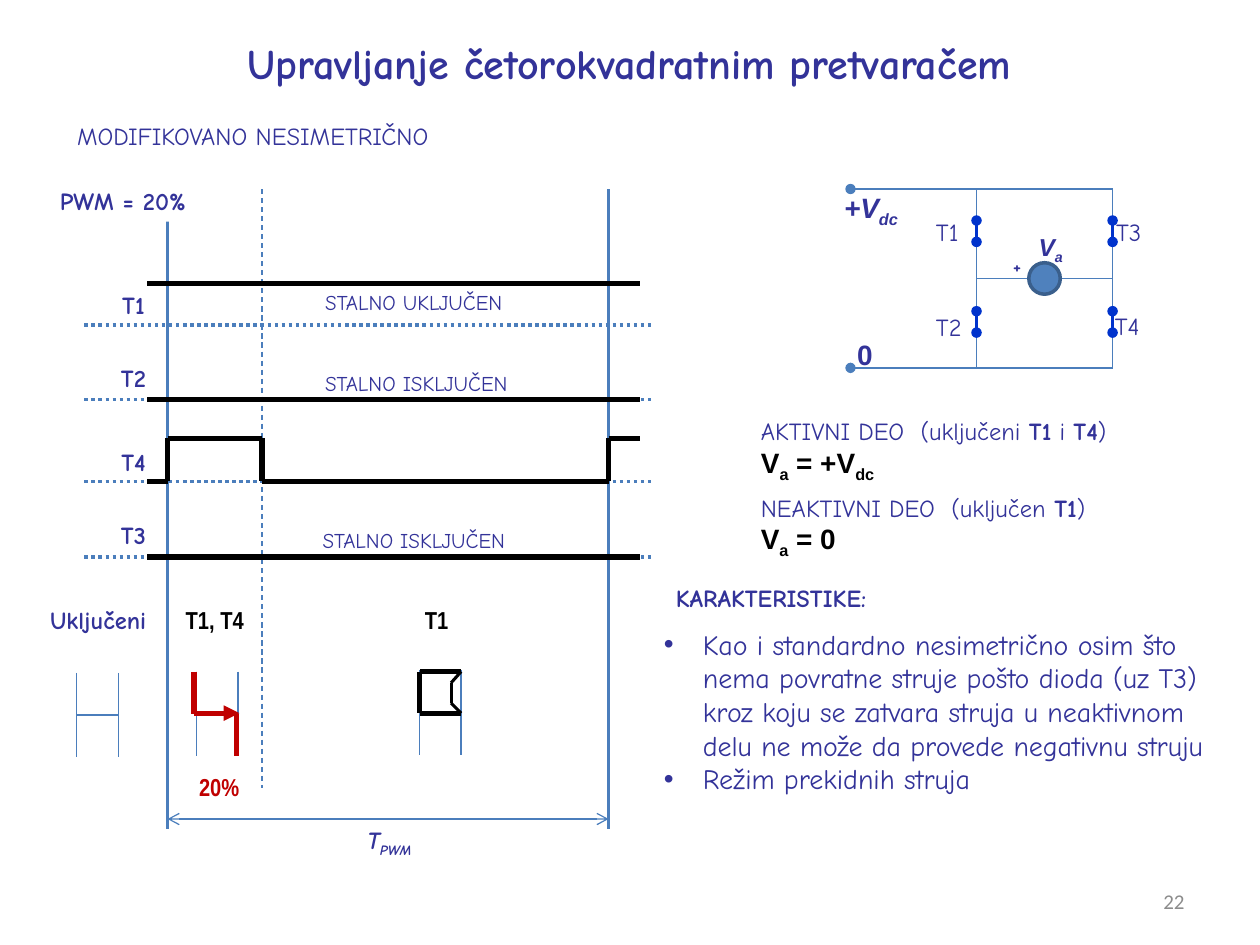
from lxml.etree import SubElement
from pptx import Presentation
from pptx.dml.color import RGBColor
from pptx.enum.dml import MSO_LINE
from pptx.enum.shapes import MSO_CONNECTOR, MSO_SHAPE
from pptx.enum.text import MSO_ANCHOR, MSO_AUTO_SIZE, PP_ALIGN
from pptx.oxml.ns import qn
from pptx.util import Inches, Pt

NAVY, BLUE, BLACK, RED, SWITCH = "333399", "4B7EBC", "000000", "C00000", "0033CC"
WHITE, GREY = "FFFFFF", "8C8C8C"
COMIC, ARIAL, NARROW = "Comic Neue", "Arial", "Arial Narrow"

START, SPLIT, END = 1.33, 2.08, 4.83
LEAD, TAIL = 1.17, 5.08
PERIOD_TOP, PERIOD_BOTTOM = 1.5, 6.58

BASELINES = [2.58, 3.17, 3.82, 4.42]
CONSTANT_SIGNALS = [2.25, 3.17, 4.42]
T4_HIGH, T4_LOW = 3.48, 3.82
T4_SIGNAL = [(LEAD, T4_LOW), (START, T4_LOW), (START, T4_HIGH), (SPLIT, T4_HIGH),
             (SPLIT, T4_LOW), (END, T4_LOW), (END, T4_HIGH), (TAIL, T4_HIGH)]

BRIDGES = [(0.61, 5.34), (1.56, 5.33), (3.33, 5.32)]
BRIDGE_WIDTH, BRIDGE_HEIGHT = 0.33, 0.67
FREEWHEEL_LOOP = [(3.66, 5.33), (3.33, 5.33), (3.33, 5.66), (3.66, 5.66)]
DIODE = [(3.66, 5.33), (3.58, 5.42), (3.58, 5.58), (3.66, 5.66)]

RAIL_START, LEFT_LEG, RIGHT_LEG = 6.75, 7.75, 8.83
RAIL_TOP, LOAD_LEVEL, RAIL_BOTTOM = 1.5, 2.21, 2.92
SWITCH_TOPS, SWITCH_LENGTH = [1.75, 2.47], 0.17
LOAD_DIAMETER = 0.25

# style letters are b bold, i italic, s subscript
LABEL_GROUPS = [
    (COMIC, 24, NAVY, "b", [((1.37, 0.25, 7.25, 0.5), "Upravljanje četorokvadratnim pretvaračem")]),
    (COMIC, 14, NAVY, "", [((0.18, 0.91, 3.72, 0.34), "MODIFIKOVANO NESIMETRIČNO ")]),
    (COMIC, 14, NAVY, "b", [
        ((0.83, 2.25, 0.46, 0.34), "T1"),
        ((0.83, 2.83, 0.46, 0.34), "T2"),
        ((0.83, 3.5, 0.46, 0.34), "T4"),
        ((0.83, 4.08, 0.46, 0.34), "T3"),
        ((0.25, 4.75, 1.06, 0.34), "Uključeni"),
        ((5.08, 4.58, 2.08, 0.34), "KARAKTERISTIKE:"),
    ]),
    (COMIC, 12, NAVY, "", [
        ((2.35, 2.25, 1.87, 0.3), "STALNO UKLJUČEN"),
        ((2.33, 2.89, 1.95, 0.3), "STALNO ISKLJUČEN"),
        ((2.31, 4.14, 1.95, 0.3), "STALNO ISKLJUČEN"),
    ]),
    (NARROW, 14, BLACK, "b", [
        ((1.37, 4.75, 0.67, 0.34), "T1, T4"),
        ((3.27, 4.75, 0.39, 0.34), "T1"),
    ]),
    (NARROW, 14, RED, "b", [((1.48, 6.08, 0.52, 0.34), "20%")]),
    (ARIAL, 16, NAVY, "b", [((6.7, 2.63, 0.33, 0.37), "0")]),
]
SYMBOLS = [
    ((2.75, 6.5, 0.72, 0.34), COMIC, 14, "T", "PWM "),
    ((6.58, 1.46, 0.7, 0.37), ARIAL, 16, "+V", "dc "),
    ((8.13, 1.79, 0.45, 0.34), ARIAL, 14, "V", "a "),
]
SWITCH_LABELS = [(7.33, 1.67, "T1"), (7.33, 2.43, "T2"), (8.76, 1.67, "T3"), (8.75, 2.42, "T4")]
STATES = [
    ((5.94, 3.25, 3.39, 0.61),
     [("AKTIVNI DEO  (uključeni ", ""), ("T1", "b"), (" i ", ""), ("T4", "b"), (")", "")],
     [("V", "b"), ("a", "bs"), (" = +V", "b"), ("dc", "bs")]),
    ((5.94, 3.86, 3.2, 0.61),
     [("NEAKTIVNI DEO  (uključen ", ""), ("T1", "b"), (")", "")],
     [("V", "b"), ("a", "bs"), (" = 0", "b")]),
]
TRAITS = [
    "Kao i standardno nesimetrično osim što nema povratne struje pošto dioda (uz T3) "
    "kroz koju se zatvara struja u neaktivnom delu ne može da provede negativnu struju",
    "Režim prekidnih struja",
]


def color(value):
    return RGBColor.from_string(value)


def draw_line(start, end, stroke=BLUE, width=0.75, dash=None, head=None, tail=None):
    line = slide.shapes.add_connector(
        MSO_CONNECTOR.STRAIGHT, *(Inches(v) for v in (*start, *end)))
    line.line.color.rgb = color(stroke)
    line.line.width = Pt(width)
    if dash:
        line.line.dash_style = dash
    outline = line.line._get_or_add_ln()
    for tag, tip in (("a:headEnd", head), ("a:tailEnd", tail)):
        if tip:
            SubElement(outline, qn(tag), type=tip)
    SubElement(line._element.spPr, qn("a:effectLst"))


def draw_path(points, stroke, width):
    for start, end in zip(points, points[1:]):
        draw_line(start, end, stroke, width)


def write(paragraph, runs, font, size, ink):
    for text, style in runs:
        run = paragraph.add_run()
        run.text = text
        run.font.name, run.font.size = font, Pt(size)
        run.font.color.rgb = color(ink)
        run.font.bold, run.font.italic = "b" in style, "i" in style
        if "s" in style:
            run._r.get_or_add_rPr().set("baseline", "-25000")


def add_frame(box, wrap=False, grow=True):
    frame = slide.shapes.add_textbox(*map(Inches, box)).text_frame
    frame.word_wrap = wrap
    if grow:
        frame.auto_size = MSO_AUTO_SIZE.SHAPE_TO_FIT_TEXT
    return frame


def add_label(box, runs, font, size, ink, align=PP_ALIGN.CENTER, **options):
    frame = add_frame(box, **options)
    frame.paragraphs[0].alignment = align
    write(frame.paragraphs[0], runs, font, size, ink)
    return frame


presentation = Presentation()
presentation.slide_width, presentation.slide_height = Inches(10), Inches(7.5)
slide = presentation.slides.add_slide(presentation.slide_layouts[6])

for level in BASELINES:
    draw_line((0.67, level), (5.17, level), width=0, dash=MSO_LINE.ROUND_DOT)
draw_line((SPLIT, PERIOD_TOP), (SPLIT, 6.25), dash=MSO_LINE.DASH)
for edge in (START, END):
    draw_line((edge, PERIOD_TOP), (edge, PERIOD_BOTTOM), width=1.25)
draw_line((START, 6.5), (END, 6.5), head="arrow", tail="arrow")
for level in CONSTANT_SIGNALS:
    draw_path([(x, level) for x in (LEAD, START, SPLIT, END, TAIL)], BLACK, 3)
draw_path(T4_SIGNAL, BLACK, 3)

for left, top in BRIDGES:
    right, middle = left + BRIDGE_WIDTH, top + BRIDGE_HEIGHT / 2
    for leg in (left, right):
        draw_line((leg, top), (leg, top + BRIDGE_HEIGHT))
    draw_line((left, middle), (right, middle))
draw_line((1.54, 5.33), (1.54, 5.67), RED, 3)
draw_line((1.88, 5.67), (1.88, 6), RED, 3)
draw_line((1.54, 5.66), (1.9, 5.66), RED, 3, tail="triangle")
draw_path(FREEWHEEL_LOOP, BLACK, 3)
draw_path(DIODE, BLACK, 1.75)

for level in (RAIL_TOP, RAIL_BOTTOM):
    draw_line((RAIL_START, level), (RIGHT_LEG, level), head="oval")
draw_line((LEFT_LEG, LOAD_LEVEL), (RIGHT_LEG, LOAD_LEVEL))
for leg in (LEFT_LEG, RIGHT_LEG):
    draw_line((leg, RAIL_TOP), (leg, RAIL_BOTTOM))
    for top in SWITCH_TOPS:
        draw_line((leg, top), (leg, top + SWITCH_LENGTH), SWITCH, 2, head="oval", tail="oval")

load = slide.shapes.add_shape(
    MSO_SHAPE.OVAL, Inches((LEFT_LEG + RIGHT_LEG - LOAD_DIAMETER) / 2),
    Inches(LOAD_LEVEL - LOAD_DIAMETER / 2), Inches(LOAD_DIAMETER), Inches(LOAD_DIAMETER))
load.shadow.inherit = False
load.fill.solid()
load.fill.fore_color.rgb = color("4F81BD")
load.line.color.rgb = color("3A5F8C")
load.line.width = Pt(2)

duty = slide.shapes.add_shape(MSO_SHAPE.RECTANGLE, *map(Inches, (0.29, 1.42, 1.37, 0.34)))
duty.shadow.inherit = False
duty.fill.solid()
duty.fill.fore_color.rgb = color(WHITE)
duty.line.fill.background()
duty.text_frame.word_wrap = False
duty.text_frame.paragraphs[0].alignment = PP_ALIGN.CENTER
write(duty.text_frame.paragraphs[0], [("PWM = 20%", "b")], COMIC, 14, NAVY)

for font, size, ink, style, labels in LABEL_GROUPS:
    for box, text in labels:
        add_label(box, [(text, style)], font, size, ink)
for box, font, size, symbol, index in SYMBOLS:
    add_label(box, [(symbol, "bi"), (index, "bis")], font, size, NAVY)
for left, top, name in SWITCH_LABELS:
    add_label((left, top, 0.58, 0.41), [(name, "")], COMIC, 14, NAVY,
              PP_ALIGN.LEFT, wrap=True, grow=False)
add_label((7.94, 1.97, 0.58, 0.41), [("+", "b")], COMIC, 11, NAVY,
          PP_ALIGN.LEFT, wrap=True, grow=False)
page = add_label((7.17, 6.95, 2.33, 0.4), [("22", "")], "Calibri", 12, GREY,
                 PP_ALIGN.RIGHT, wrap=True, grow=False)
page.vertical_anchor = MSO_ANCHOR.MIDDLE

for box, condition, voltage in STATES:
    state = add_label(box, condition, COMIC, 14, NAVY, PP_ALIGN.LEFT)
    write(state.add_paragraph(), voltage, ARIAL, 16, BLACK)

traits = add_frame((5.17, 4.93, 4.61, 1.72), wrap=True)
for number, trait in enumerate(TRAITS):
    paragraph = traits.add_paragraph() if number else traits.paragraphs[0]
    write(paragraph, [(trait, "")], COMIC, 16, NAVY)
    properties = paragraph._p.get_or_add_pPr()
    properties.set("marL", str(Inches(0.31)))
    properties.set("indent", str(-Inches(0.31)))
    SubElement(properties, qn("a:buFont"), typeface=ARIAL)
    SubElement(properties, qn("a:buChar"), char="•")

presentation.save("out.pptx")
